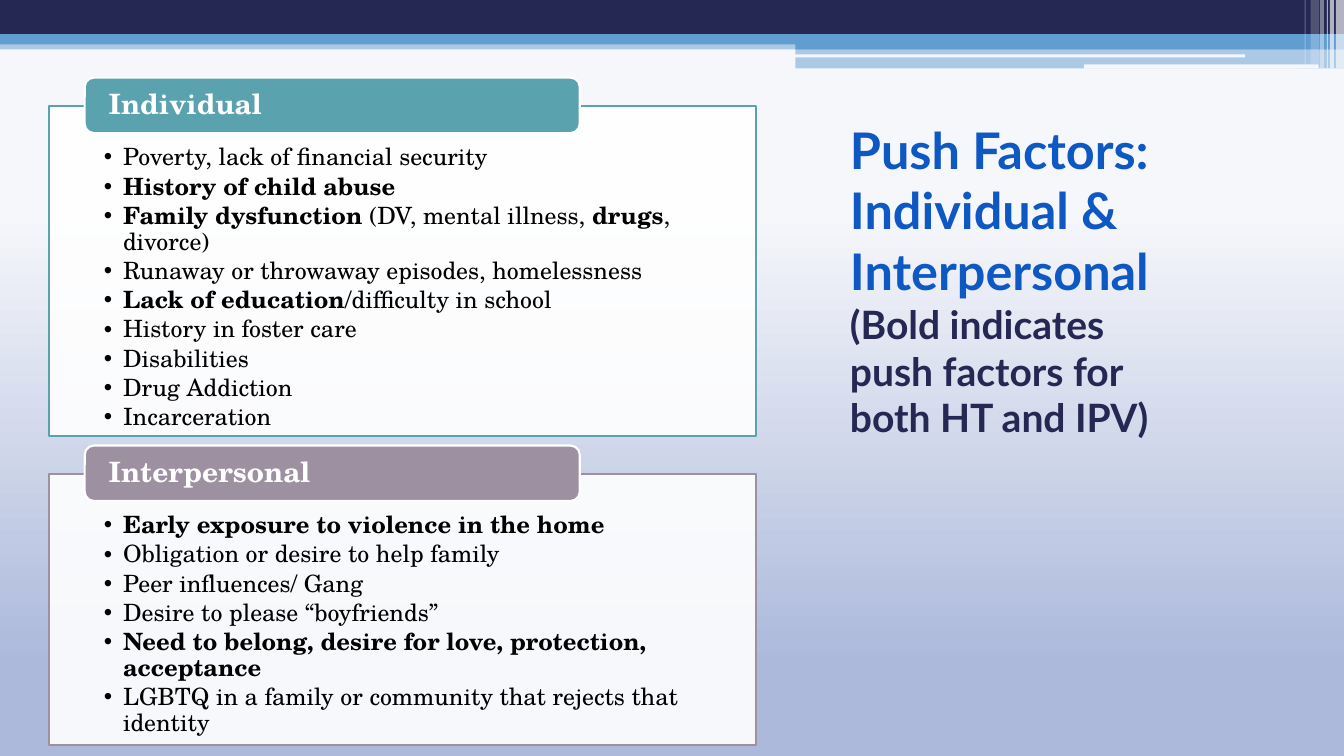
from lxml.etree import SubElement as Sub
from pptx import Presentation as Deck
from pptx.dml.color import RGBColor as RGB
from pptx.enum.shapes import MSO_SHAPE as Form
from pptx.enum.text import MSO_ANCHOR as Anchor, MSO_AUTO_SIZE as Auto, PP_ALIGN as Align
from pptx.oxml.ns import qn
from pptx.util import Inches, Pt

COLORS = {
    "navy": "242852", "sky": "629DD1", "white": "FFFFFF", "black": "000000",
    "pale": "F6F7FB", "haze": "ACB9DB", "royal": "0E58C4",
    "teal": "5AA2AE", "mauve": "9D90A0",
}
SERIF, SANS = "TeX Gyre Schola", "Lato"
BANDS = [
    (0, 0.4, 13.33, 0.09, "sky", 50),
    (0, 0, 13.33, 0.34, "navy", 100),
    (0, 0.34, 13.33, 0.1, "sky", 100),
    (7.89, 0.39, 5.44, 0.1, "sky", 100),
    (7.89, 0.48, 5.44, 0.2, "sky", 50),
]
SLITS = [(7.88, 0.54, 4.47, 0.03), (10.75, 0.64, 2.33, 0.04)]
STRIPES = [
    (13.25, 0.08, 0.68, 65), (13.19, 0.04, 0.68, 65), (13.16, 0.01, 0.68, 60),
    (13.09, 0.04, 0.68, 40), (13, 0.08, 0.64, 20), (12.94, 0.01, 0.64, 30),
]
PANELS = [
    ("Individual", "teal", 1.05, 3.28, [
        "Poverty, lack of financial security",
        "*History of child abuse*",
        "*Family dysfunction *(DV, mental illness, *drugs*, divorce)",
        "Runaway or throwaway episodes, homelessness",
        "*Lack of education*/difficulty in school",
        "History in foster care",
        "Disabilities",
        "Drug Addiction",
        "Incarceration",
    ]),
    ("Interpersonal", "mauve", 4.7, 2.69, [
        "*Early exposure to violence in the home*",
        "Obligation or desire to help family",
        "Peer influences/ Gang",
        "Desire to please “boyfriends”",
        "*Need to belong, desire for love, protection, acceptance*",
        "LGBTQ in a family or community that rejects that identity",
    ]),
]
HEADING = [
    ("Push Factors: Individual & Interpersonal", 36, "royal"),
    ("(Bold indicates", 27.9, "navy"),
    ("push factors for", 27.9, "navy"),
    ("both HT and IPV)", 27.9, "navy"),
]


def tint(name):
    """Return a named colour."""
    return RGB.from_string(COLORS[name])


def apply(item, **values):
    """Set each given attribute on an item."""
    for key, value in values.items():
        setattr(item, key, value)


def place(shape, box):
    """Move and size a shape in inches."""
    sides = zip(("left", "top", "width", "height"), box)
    apply(shape, **{side: Inches(size) for side, size in sides})


def paint(shape, color, alpha=100, edge=None):
    """Fill a shape and draw or drop its outline."""
    shape.fill.solid()
    shape.fill.fore_color.rgb = tint(color)
    if alpha < 100:
        node = next(shape._element.spPr.iter(qn("a:srgbClr")))
        Sub(node, qn("a:alpha"), val=str(alpha * 1000))
    if edge:
        shape.line.color.rgb = tint(edge)
        shape.line.width = Pt(1.5)
    else:
        shape.line.fill.background()


def block(slide, box, color, alpha=100, edge=None, form=Form.RECTANGLE):
    """Add a painted preset shape."""
    shape = slide.shapes.add_shape(form, *map(Inches, box))
    shape.shadow.inherit = False
    paint(shape, color, alpha, edge)
    return shape


def frame(shape, anchor, left, top, right, bottom):
    """Prepare a text frame with insets in inches."""
    text = shape.text_frame
    apply(text, word_wrap=True, auto_size=Auto.NONE, vertical_anchor=anchor,
          margin_left=Inches(left), margin_top=Inches(top),
          margin_right=Inches(right), margin_bottom=Inches(bottom))
    return text


def write(para, words, face, size, color, bold=True):
    """Add a styled run to a paragraph."""
    run = para.add_run()
    run.text = words
    apply(run.font, name=face, size=Pt(size), bold=bold)
    run.font.color.rgb = tint(color)


def shade(slide):
    """Give the slide its vertical gradient."""
    fill = slide.background.fill
    fill.gradient()
    fill.gradient_angle = 270
    stops = next(slide._element.iter(qn("a:gsLst")))
    for stop in list(stops):
        stops.remove(stop)
    for spot, color in ((28, "pale"), (88, "haze"), (100, "haze")):
        stop = Sub(stops, qn("a:gs"), pos=str(spot * 1000))
        Sub(stop, qn("a:srgbClr"), val=COLORS[color])


def trim(slide):
    """Draw the bands and stripes along the top."""
    for *box, color, alpha in BANDS:
        block(slide, box, color, alpha)
    for box in SLITS:
        block(slide, box, "pale", form=Form.ROUNDED_RECTANGLE)
    for left, width, height, alpha in STRIPES:
        block(slide, (left, 0, width, height), "white", alpha)


def title(slide):
    """Fill the title placeholder."""
    shape = slide.shapes.title
    place(shape, (8.33, 1.17, 4.83, 3.21))
    para = frame(shape, Anchor.MIDDLE, 0.1, 0.05, 0.1, 0.05).paragraphs[0]
    para.alignment = Align.LEFT
    for order, (words, size, color) in enumerate(HEADING):
        if order:
            para.add_line_break()
        write(para, words, SANS, size, color)


def bullet(para, item):
    """Write one bullet, with bold words between asterisks."""
    apply(para, alignment=Align.LEFT, line_spacing=0.9,
          space_before=Pt(0), space_after=Pt(2.55))
    props = para._p.get_or_add_pPr()
    props.set("marL", str(Inches(0.19)))
    props.set("indent", str(-Inches(0.19)))
    Sub(props, qn("a:buChar"), char="•")
    for order, words in enumerate(item.split("*")):
        if words:
            write(para, words, SERIF, 17, "black", order % 2 == 1)


def panel(slide, holder, name, color, top, height, items):
    """Build a bordered list with its heading tab."""
    place(holder, (0.49, top, 7.01, height))
    paint(holder, "white", 90, color)
    text = frame(holder, Anchor.TOP, 0.54, 0.39, 0.54, 0.13)
    for order, item in enumerate(items):
        bullet(text.add_paragraph() if order else text.paragraphs[0], item)
    tab = block(slide, (0.84, top - 0.28, 4.91, 0.55), color, edge="white",
                form=Form.ROUNDED_RECTANGLE)
    para = frame(tab, Anchor.MIDDLE, 0.21, 0, 0.21, 0).paragraphs[0]
    apply(para, alignment=Align.LEFT, line_spacing=0.9)
    write(para, name, SERIF, 20, "white")


def main():
    """Build and save the slide."""
    deck = Deck()
    apply(deck, slide_width=Inches(13.33), slide_height=Inches(7.5))
    slide = deck.slides.add_slide(deck.slide_layouts[3])
    shade(slide)
    trim(slide)
    title(slide)
    for order, parts in enumerate(PANELS, 1):
        panel(slide, slide.placeholders[order], *parts)
    deck.save("out.pptx")


if __name__ == "__main__":
    main()
